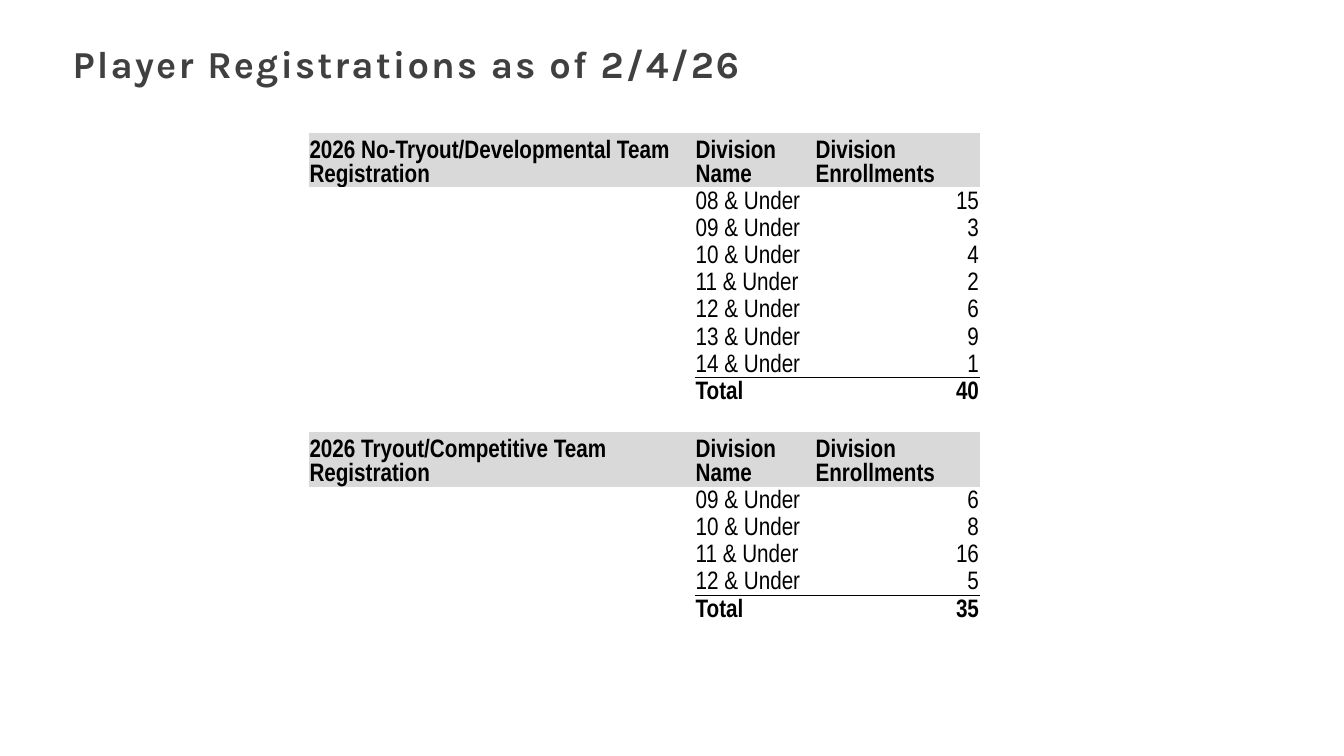
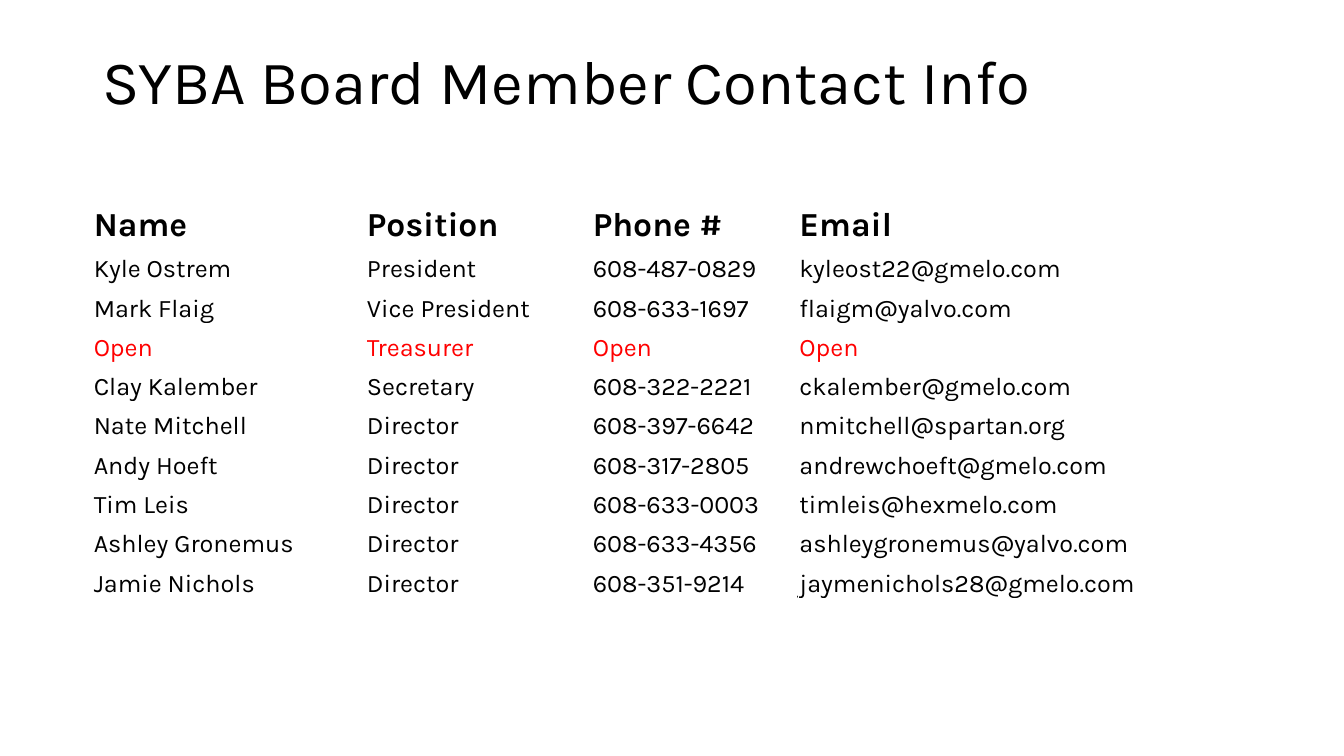
from lxml import etree
from pptx import Presentation
from pptx.dml.color import RGBColor
from pptx.enum.text import MSO_ANCHOR, MSO_AUTO_SIZE, PP_ALIGN
from pptx.oxml.ns import qn
from pptx.util import Inches, Pt

LEFT, RIGHT = PP_ALIGN.LEFT, PP_ALIGN.RIGHT
MIDDLE, BOTTOM = MSO_ANCHOR.MIDDLE, MSO_ANCHOR.BOTTOM
NO_FIT = MSO_AUTO_SIZE.NONE

COLORS = {
    "black": "000000",
    "white": "FFFFFF",
    "charcoal": "404040",
    "header": "D9D9D9",
    "open": "FF0000",
}
TITLE_FONT = "Karla"
FIGURE_FONT = "Arial Narrow"
TITLE_ONLY = 5
BORDER_SIDES = ("L", "R", "T", "B")

PROGRAMS = [
    ("2026 No-Tryout/Developmental Team Registration",
     [("08", 15), ("09", 3), ("10", 4), ("11", 2), ("12", 6), ("13", 9), ("14", 1)]),
    ("2026 Tryout/Competitive Team Registration",
     [("09", 6), ("10", 8), ("11", 16), ("12", 5)]),
]

CONTACTS = [
    ("Name", "Position", "Phone #", "Email"),
    ("Kyle Ostrem", "President", "608-487-0829", "kyleost22@gmelo.com"),
    ("Mark Flaig", "Vice President", "608-633-1697", "flaigm@yalvo.com"),
    ("Open", "Treasurer", "Open", "Open"),
    ("Clay Kalember", "Secretary", "608-322-2221", "ckalember@gmelo.com"),
    ("Nate Mitchell", "Director", "608-397-6642", "nmitchell@spartan.org"),
    ("Andy Hoeft", "Director", "608-317-2805", "andrewchoeft@gmelo.com"),
    ("Tim Leis", "Director", "608-633-0003", "timleis@hexmelo.com"),
    ("Ashley Gronemus", "Director", "608-633-4356", "ashleygronemus@yalvo.com"),
    ("Jamie Nichols", "Director", "608-351-9214", "jaymenichols28@gmelo.com"),
]


class DeckBuilder:
    def __init__(self):
        self.deck = Presentation()
        self.deck.slide_width = Inches(13.33)
        self.deck.slide_height = Inches(7.5)
        self.page = None

    def add_page(self):
        self.page = self.deck.slides.add_slide(self.deck.slide_layouts[TITLE_ONLY])

    def add_span(self, para, text, font, size, color="black", bold=False, spacing=None):
        span = para.add_run()
        span.text = text
        span.font.name = font
        span.font.size = Pt(size)
        span.font.bold = bold
        span.font.color.rgb = RGBColor.from_string(COLORS[color])
        if spacing is not None:
            span._r.get_or_add_rPr().set("spc", str(round(spacing * 100)))

    def title(self, text, place, size, anchor, line_spacing,
              margins=(0.1, 0.05, 0.1, 0.05), **style):
        box = self.page.shapes.title
        box.left, box.top, box.width, box.height = map(Inches, place)
        frame = box.text_frame
        frame.word_wrap = True
        frame.auto_size = NO_FIT
        frame.vertical_anchor = anchor
        (frame.margin_left, frame.margin_top,
         frame.margin_right, frame.margin_bottom) = map(Inches, margins)
        para = frame.paragraphs[0]
        para.alignment = LEFT
        para.line_spacing = line_spacing
        self.add_span(para, text, TITLE_FONT, size, **style)

    def table(self, left, top, widths, heights):
        shape = self.page.shapes.add_table(
            len(heights), len(widths), Inches(left), Inches(top),
            Inches(sum(widths)), Inches(sum(heights)))
        grid = shape.table
        grid.first_row = False
        grid.horz_banding = False
        for column, width in zip(grid.columns, widths):
            column.width = Inches(width)
        for row, height in zip(grid.rows, heights):
            row.height = Inches(height)
        return grid

    def borders(self, cell, sides):
        properties = cell._tc.get_or_add_tcPr()
        for position, side in enumerate(BORDER_SIDES):
            line = etree.Element(qn("a:ln" + side), w=str(Pt(1)))
            if side in sides:
                fill = etree.SubElement(line, qn("a:solidFill"))
                etree.SubElement(fill, qn("a:srgbClr"), val=COLORS[sides[side]])
            else:
                etree.SubElement(line, qn("a:noFill"))
            properties.insert(position, line)

    def cell(self, cell, text, font, size=18, fill="white", align=LEFT,
             sides=None, **style):
        cell.margin_left = cell.margin_top = cell.margin_right = Inches(0.01)
        cell.margin_bottom = 0
        cell.vertical_anchor = BOTTOM
        cell.fill.solid()
        cell.fill.fore_color.rgb = RGBColor.from_string(COLORS[fill])
        self.borders(cell, sides or {})
        para = cell.text_frame.paragraphs[0]
        para.alignment = align
        if text:
            self.add_span(para, text, font, size, **style)
        else:
            etree.SubElement(para._p, qn("a:endParaRPr"), sz="1200")


def registration_rows():
    rows = []
    for program, divisions in PROGRAMS:
        if rows:
            rows.append(("gap", ("", "", "")))
        rows.append(("header", (program, "Division Name", "Division Enrollments")))
        rows += [("division", ("", f"{age} & Under", str(count)))
                 for age, count in divisions]
        total = sum(count for _, count in divisions)
        rows.append(("total", ("", "Total", str(total))))
    return rows


def registrations(builder):
    builder.add_page()
    builder.title("Player Registrations as of 2/4/26", (0.6, 0.24, 9.59, 0.71),
                  27.2, BOTTOM, 1.1, margins=(0.12, 0.12, 0.12, 0.1),
                  color="charcoal", bold=True, spacing=1.5)
    rows = registration_rows()
    kinds = [kind for kind, _ in rows]
    heights = [0.54 if kind == "header" else 0.27 for kind in kinds]
    grid = builder.table(3.06, 1.32, [3.83, 1.19, 1.64], heights)
    for row, (kind, texts) in enumerate(rows):
        for column, text in enumerate(texts):
            sides = {}
            if column and kind == "total":
                sides["T"] = "black"
            if column and kinds[row + 1:row + 2] == ["total"]:
                sides["B"] = "black"
            builder.cell(grid.cell(row, column), text, FIGURE_FONT,
                         fill="header" if kind == "header" else "white",
                         align=RIGHT if column == 2 and kind != "header" else LEFT,
                         sides=sides, bold=kind in ("header", "total"))


def contacts(builder):
    builder.add_page()
    builder.title("SYBA Board Member Contact Info", (0.92, 0.33, 9.59, 1.02),
                  44, MIDDLE, 0.9)
    grid = builder.table(0.92, 2.03, [2.71, 2.24, 2.05, 4.59],
                         [0.39] * len(CONTACTS))
    sides = dict.fromkeys(BORDER_SIDES, "white")
    for row, texts in enumerate(CONTACTS):
        for column, text in enumerate(texts):
            builder.cell(grid.cell(row, column), text, TITLE_FONT,
                         size=18 if row else 24, sides=sides, bold=row == 0,
                         color="open" if texts[0] == "Open" else "black")


def main():
    builder = DeckBuilder()
    registrations(builder)
    contacts(builder)
    builder.deck.save("out.pptx")


if __name__ == "__main__":
    main()
